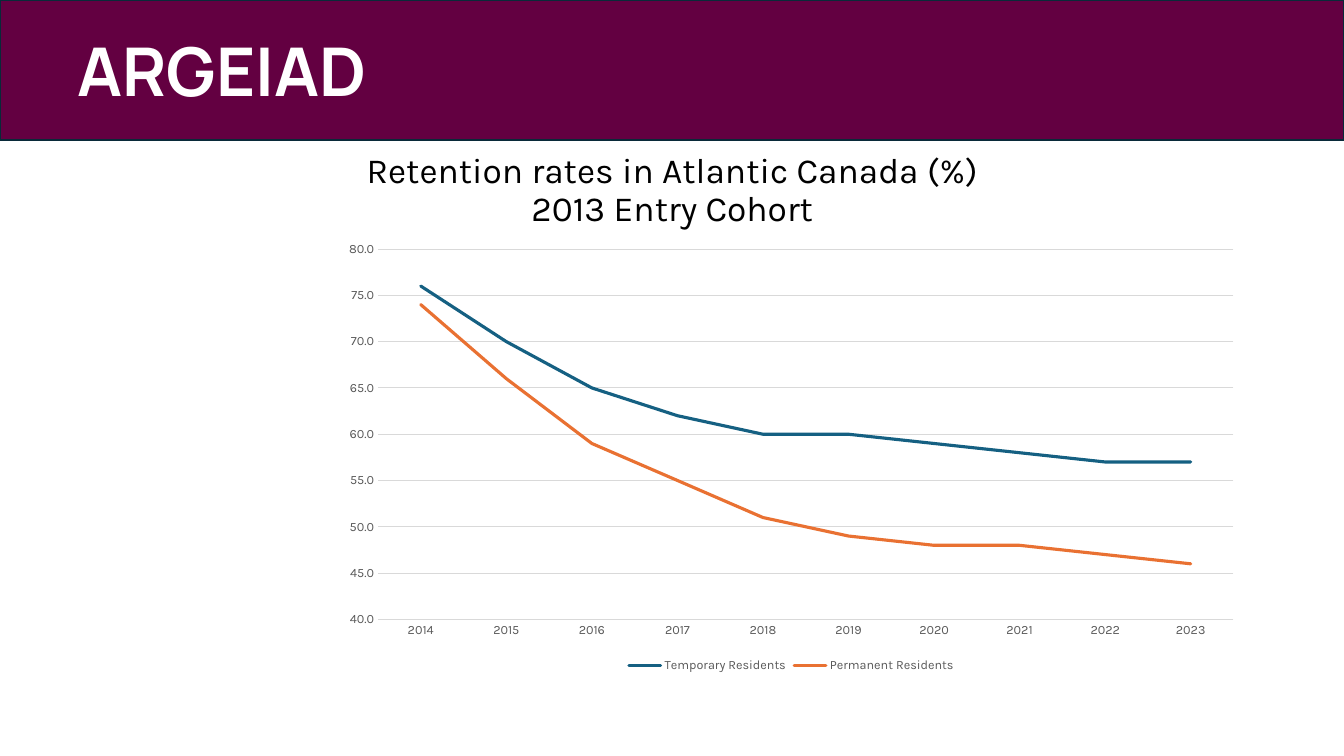
from pptx import Presentation
from pptx.chart.data import CategoryChartData
from pptx.dml.color import RGBColor
from pptx.enum.chart import XL_CHART_TYPE, XL_LEGEND_POSITION, XL_TICK_MARK
from pptx.enum.shapes import MSO_SHAPE
from pptx.enum.text import MSO_ANCHOR, PP_ALIGN
from pptx.util import Inches, Pt

WIDTH, HEIGHT = Inches(13.33), Inches(7.5)

PLUM = RGBColor(0x63, 0x00, 0x41)
NAVY = RGBColor(0x09, 0x2A, 0x39)
WHITE = RGBColor(0xFF, 0xFF, 0xFF)
BLACK = RGBColor(0x00, 0x00, 0x00)
GREY = RGBColor(0x59, 0x59, 0x59)
LIGHT_GREY = RGBColor(0xD9, 0xD9, 0xD9)
TEAL = RGBColor(0x15, 0x60, 0x82)
ORANGE = RGBColor(0xE9, 0x71, 0x32)

YEARS = [str(year) for year in range(2014, 2024)]
RETENTION = [
    ("Temporary Residents", TEAL, (76, 70, 65, 62, 60, 60, 59, 58, 57, 57)),
    ("Permanent Residents", ORANGE, (74, 66, 59, 55, 51, 49, 48, 48, 47, 46)),
]


def area(left, top, width, height):
    """Turn percentages of the slide into a position and size."""
    return (int(WIDTH * left / 100), int(HEIGHT * top / 100),
            int(WIDTH * width / 100), int(HEIGHT * height / 100))


def set_font(font, name, size, color, bold=False):
    font.name = name
    font.size = Pt(size)
    font.bold = bold
    font.color.rgb = color


def set_line(line, color, width):
    line.color.rgb = color
    line.width = Pt(width)


def add_banner(slide, text):
    banner = slide.shapes.add_shape(MSO_SHAPE.RECTANGLE, *area(0, 0, 100, 18.55))
    banner.shadow.inherit = False
    banner.fill.solid()
    banner.fill.fore_color.rgb = PLUM
    set_line(banner.line, NAVY, 1.5)
    frame = banner.text_frame
    frame.vertical_anchor = MSO_ANCHOR.MIDDLE
    frame.margin_left = Inches(0.77)
    wordmark = frame.paragraphs[0]
    wordmark.text = text
    wordmark.alignment = PP_ALIGN.LEFT
    set_font(wordmark.font, "Manrope", 48, WHITE, bold=True)


def add_title(slide, text):
    box = slide.shapes.add_textbox(*area(6.9, 19.75, 86.25, 11))
    frame = box.text_frame
    frame.word_wrap = True
    frame.vertical_anchor = MSO_ANCHOR.MIDDLE
    title = frame.paragraphs[0]
    title.text = text
    title.alignment = PP_ALIGN.CENTER
    title.line_spacing = 0.9
    set_font(title.font, "Karla", 25.2, BLACK)


def style_axis(axis):
    axis.major_tick_mark = axis.minor_tick_mark = XL_TICK_MARK.NONE
    set_font(axis.tick_labels.font, "Karla", 9, GREY)


def add_retention_chart(slide):
    data = CategoryChartData(number_format="0.0")
    data.categories = YEARS
    for name, _, rates in RETENTION:
        data.add_series(name, rates)
    chart = slide.shapes.add_chart(
        XL_CHART_TYPE.LINE, *area(24.6, 30.8, 68.55, 58.75), data).chart
    chart.has_title = False
    set_font(chart.font, "Karla", 10, BLACK)

    # Lines with round ends
    plot = chart.plots[0]
    plot.vary_by_categories = False
    for series, (_, color, _) in zip(plot.series, RETENTION):
        series.smooth = False
        set_line(series.format.line, color, 2.25)
        series._element.xpath("c:spPr/a:ln")[0].set("cap", "rnd")

    # Axes
    years, rates = chart.category_axis, chart.value_axis
    style_axis(years)
    set_line(years.format.line, LIGHT_GREY, 0.75)
    style_axis(rates)
    rates.format.line.fill.background()
    rates.minimum_scale, rates.maximum_scale, rates.major_unit = 40, 80, 5
    rates.tick_labels.number_format = "0.0"
    rates.tick_labels.number_format_is_linked = False
    set_line(rates.major_gridlines.format.line, LIGHT_GREY, 0.75)

    # Legend
    chart.has_legend = True
    chart.legend.position = XL_LEGEND_POSITION.BOTTOM
    chart.legend.include_in_layout = False
    set_font(chart.legend.font, "Karla", 9, GREY)


def main():
    deck = Presentation()
    deck.slide_width, deck.slide_height = WIDTH, HEIGHT
    slide = deck.slides.add_slide(deck.slide_layouts[6])
    add_banner(slide, "ARGEIAD")
    add_title(slide, "Retention rates in Atlantic Canada (%)\v2013 Entry Cohort")
    add_retention_chart(slide)
    deck.save("out.pptx")


if __name__ == "__main__":
    main()
